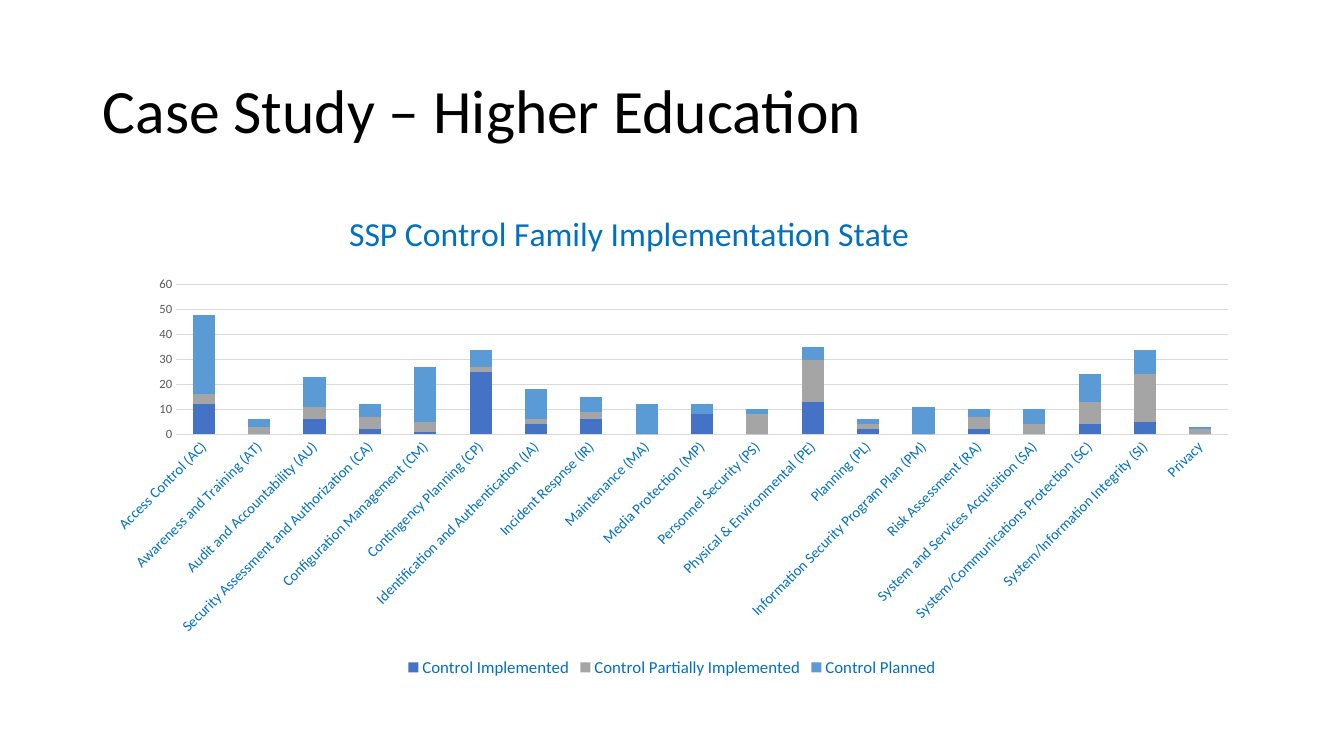
"""Build the higher education case study slide with its stacked control chart."""
from lxml import etree
from pptx import Presentation
from pptx.chart.data import CategoryChartData
from pptx.dml.color import RGBColor
from pptx.enum.chart import XL_CHART_TYPE, XL_LEGEND_POSITION, XL_TICK_MARK
from pptx.enum.text import MSO_ANCHOR
from pptx.oxml.ns import qn
from pptx.util import Inches, Pt

STACKED = XL_CHART_TYPE.COLUMN_STACKED
BOTTOM = XL_LEGEND_POSITION.BOTTOM
NO_TICK = XL_TICK_MARK.NONE
MIDDLE = MSO_ANCHOR.MIDDLE

HEADING = "Case Study – Higher Education"
CHART_TITLE = "SSP Control Family Implementation State"
SERIES = [
    ("Control Implemented", "implemented"),
    ("Control Partially Implemented", "partial"),
    ("Control Planned", "planned"),
]
FAMILIES = [
    ("Access Control (AC)", 12, 4, 32),
    ("Awareness and Training (AT)", 0, 3, 3),
    ("Audit and Accountability (AU)", 6, 5, 12),
    ("Security Assessment and Authorization (CA)", 2, 5, 5),
    ("Configuration Management (CM)", 1, 4, 22),
    ("Contingency Planning (CP)", 25, 2, 7),
    ("Identification and Authentication (IA)", 4, 2, 12),
    ("Incident Respnse (IR)", 6, 3, 6),
    ("Maintenance (MA)", 0, 0, 12),
    ("Media Protection (MP)", 8, 0, 4),
    ("Personnel Security (PS)", 0, 8, 2),
    ("Physical & Environmental (PE)", 13, 17, 5),
    ("Planning (PL)", 2, 2, 2),
    ("Information Security Program Plan (PM)", 0, 0, 11),
    ("Risk Assessment (RA)", 2, 5, 3),
    ("System and Services Acquisition (SA)", 0, 4, 6),
    ("System/Communications Protection (SC)", 4, 9, 11),
    ("System/Information Integrity (SI)", 5, 19, 10),
    ("Privacy", 0, 2, 1),
]
COLORS = {
    "black": "000000", "label": "0070C0", "scale": "595959", "grid": "D9D9D9",
    "implemented": "4472C4", "partial": "A5A5A5", "planned": "5B9BD5",
}
WIDTH, HEIGHT = 13.33, 7.5
MARGIN = 0.92
HEADING_AREA = (MARGIN, 0.4, WIDTH - 2 * MARGIN, 1.45)
CHART_AREA = (MARGIN, 2, WIDTH - 2 * MARGIN, 4.76)
PLOT_PERCENT = {"x": 7.2, "y": 17.3, "w": 90.8, "h": 31.25}
TITLE_PERCENT = {"x": 21.6, "y": 0.7}
LABEL_TURN = -45


def color(name):
    return RGBColor.from_string(COLORS[name])


def style_font(font, size, tint):
    for key, value in {"name": "Calibri", "size": Pt(size), "bold": False}.items():
        setattr(font, key, value)
    font.color.rgb = color(tint)


def style_line(line):
    line.color.rgb = color("grid")
    line.width = Pt(0.75)


def place(element, percents, index, inner=False):
    for old in element.findall(qn("c:layout")):
        element.remove(old)
    layout = etree.Element(qn("c:layout"))
    manual = etree.SubElement(layout, qn("c:manualLayout"))
    settings = [("layoutTarget", "inner")] if inner else []
    settings += [("xMode", "edge"), ("yMode", "edge")]
    settings += [(tag, percent / 100) for tag, percent in percents.items()]
    for tag, value in settings:
        etree.SubElement(manual, qn(f"c:{tag}")).set("val", str(value))
    element.insert(index, layout)


def add_heading(page):
    box = page.shapes.add_textbox(*map(Inches, HEADING_AREA))
    frame = box.text_frame
    for key, value in {"word_wrap": True, "vertical_anchor": MIDDLE}.items():
        setattr(frame, key, value)
    para = frame.paragraphs[0]
    para.line_spacing = 0.9
    span = para.add_run()
    span.text = HEADING
    style_font(span.font, 44, "black")


def add_control_chart(page):
    names, *columns = zip(*FAMILIES)
    data = CategoryChartData()
    data.categories = names
    for (label, tint), values in zip(SERIES, columns):
        data.add_series(label, values)
    chart = page.shapes.add_chart(STACKED, *map(Inches, CHART_AREA), data).chart
    style_font(chart.font, 10, "black")

    plot = chart.plots[0]
    for key, value in {"gap_width": 150, "overlap": 100, "vary_by_categories": False}.items():
        setattr(plot, key, value)
    for series, (label, tint) in zip(plot.series, SERIES):
        series.format.fill.solid()
        series.format.fill.fore_color.rgb = color(tint)

    title = chart.chart_title
    title.text_frame.text = CHART_TITLE
    style_font(title.text_frame.paragraphs[0].runs[0].font, 24, "label")
    place(title.element, TITLE_PERCENT, 1)

    axes = [(chart.category_axis, 10.5, "label"), (chart.value_axis, 9, "scale")]
    for axis, size, tint in axes:
        axis.major_tick_mark = axis.minor_tick_mark = NO_TICK
        style_font(axis.tick_labels.font, size, tint)
    style_line(chart.category_axis.format.line)
    chart.value_axis.format.line.fill.background()
    style_line(chart.value_axis.major_gridlines.format.line)
    for key, value in {"minimum_scale": 0, "maximum_scale": 60, "major_unit": 10}.items():
        setattr(chart.value_axis, key, value)
    for body in chart.element.xpath(".//c:catAx/c:txPr/a:bodyPr"):
        body.set("rot", str(LABEL_TURN * 60000))
        body.set("vert", "horz")

    chart.has_legend = True
    for key, value in {"position": BOTTOM, "include_in_layout": False}.items():
        setattr(chart.legend, key, value)
    style_font(chart.legend.font, 12, "label")
    place(chart.element.xpath(".//c:plotArea")[0], PLOT_PERCENT, 0, inner=True)


def main():
    deck = Presentation()
    deck.slide_width, deck.slide_height = Inches(WIDTH), Inches(HEIGHT)
    page = deck.slides.add_slide(deck.slide_layouts[6])
    add_heading(page)
    add_control_chart(page)
    deck.save("out.pptx")


if __name__ == "__main__":
    main()
